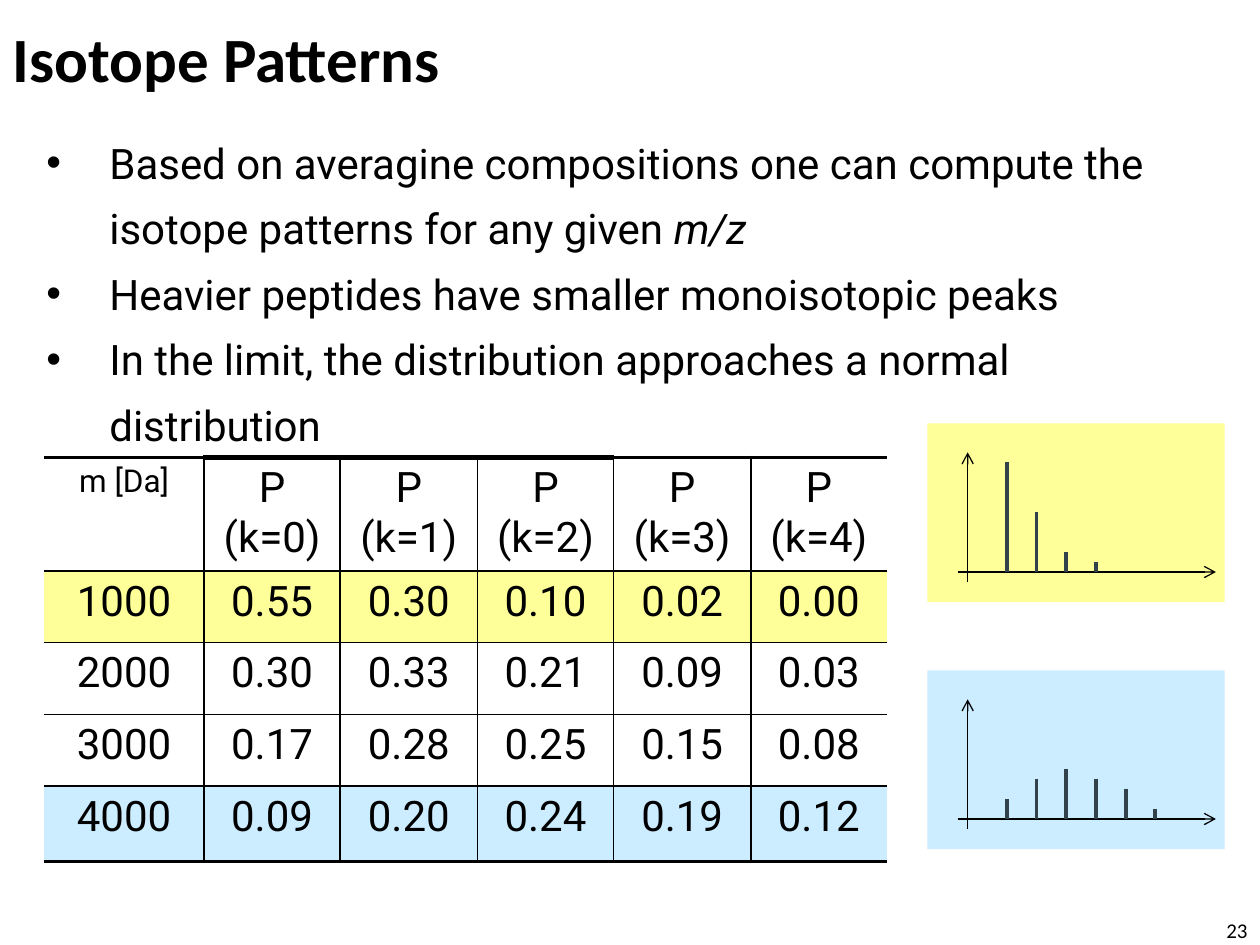
from lxml.etree import SubElement
from pptx import Presentation
from pptx.dml.color import RGBColor
from pptx.enum.shapes import MSO_CONNECTOR as Connector, MSO_SHAPE as Shape
from pptx.enum.text import MSO_ANCHOR as Anchor, MSO_AUTO_SIZE as AutoSize, PP_ALIGN as Align
from pptx.oxml.ns import qn
from pptx.util import Inches, Pt

COLORS = {"ink": "000000", "peak": "31424A", "yellow": "FFFF99", "blue": "CCECFF"}
BODY_FONT, HEAD_FONT = "Roboto", "Calibri"

BULLETS = [
    [("Based on averagine compositions one can compute the isotope patterns "
      "for any given ", False), ("m/z", True)],
    [("Heavier peptides have smaller monoisotopic peaks", False)],
    [("In the limit, the distribution approaches a normal distribution", False)],
]
PROBABILITIES = [
    ["m [Da]"] + [f"P\n(k={k})" for k in range(5)],
    ["1000", "0.55", "0.30", "0.10", "0.02", "0.00"],
    ["2000", "0.30", "0.33", "0.21", "0.09", "0.03"],
    ["3000", "0.17", "0.28", "0.25", "0.15", "0.08"],
    ["4000", "0.09", "0.20", "0.24", "0.19", "0.12"],
]
COLUMN_WIDTHS = [1.27, 1.08, 1.09, 1.08, 1.09, 1.08]
ROW_HEIGHTS = [0.9, 0.57, 0.57, 0.57, 0.6]
ROW_FILLS = {1: "yellow", 4: "blue"}


def rgb(name):
    return RGBColor.from_string(COLORS[name])


class SlideBuilder:
    def __init__(self, page):
        self.page = page

    def span(self, para, text, size, font=BODY_FONT, bold=False, italic=False):
        span = para.add_run()
        span.text = text
        span.font.size = Pt(size)
        span.font.name = font
        span.font.bold = bold
        span.font.italic = italic
        span.font.color.rgb = rgb("ink")

    def title(self, text, left, top, width, height):
        box = self.page.shapes.title
        box.left, box.top = Inches(left), Inches(top)
        box.width, box.height = Inches(width), Inches(height)
        frame = box.text_frame
        frame.auto_size = AutoSize.NONE
        frame.vertical_anchor = Anchor.MIDDLE
        para = frame.paragraphs[0]
        para.alignment = Align.LEFT
        self.span(para, text, 36, HEAD_FONT, bold=True)

    def text_box(self, left, top, width, height):
        box = self.page.shapes.add_textbox(
            Inches(left), Inches(top), Inches(width), Inches(height))
        box.text_frame.word_wrap = True
        return box.text_frame

    def bullets(self, items, left, top, width, height):
        frame = self.text_box(left, top, width, height)
        frame.auto_size = AutoSize.SHAPE_TO_FIT_TEXT
        for index, item in enumerate(items):
            para = frame.add_paragraph() if index else frame.paragraphs[0]
            para.line_spacing = 1.3
            props = para._p.get_or_add_pPr()
            props.set("marL", str(Inches(0.5)))
            props.set("indent", str(-Inches(0.5)))
            SubElement(props, qn("a:buFont")).set("typeface", "Arial")
            SubElement(props, qn("a:buChar")).set("char", "•")
            for text, italic in item:
                self.span(para, text, 24, italic=italic)

    def page_number(self, text, left, top, width, height):
        frame = self.text_box(left, top, width, height)
        frame.vertical_anchor = Anchor.MIDDLE
        para = frame.paragraphs[0]
        para.alignment = Align.RIGHT
        self.span(para, text, 12, HEAD_FONT)

    def borders(self, cell, widths):
        """Draw left, right, top and bottom borders; width 0 means none."""
        props = cell._tc.get_or_add_tcPr()
        for index, (side, width) in enumerate(zip("LRTB", widths)):
            line = SubElement(props, qn(f"a:ln{side}"))
            props.insert(index, line)
            if width:
                line.set("w", str(Pt(width)))
                fill = SubElement(line, qn("a:solidFill"))
                SubElement(fill, qn("a:srgbClr")).set("val", COLORS["ink"])
            else:
                SubElement(line, qn("a:noFill"))

    def table(self, rows, left, top):
        last_row, last_column = len(rows) - 1, len(rows[0]) - 1
        table = self.page.shapes.add_table(
            len(rows), len(rows[0]), Inches(left), Inches(top),
            Inches(sum(COLUMN_WIDTHS)), Inches(sum(ROW_HEIGHTS))).table
        table.first_row = table.horz_banding = False
        for column, width in zip(table.columns, COLUMN_WIDTHS):
            column.width = Inches(width)
        for r, texts in enumerate(rows):
            table.rows[r].height = Inches(ROW_HEIGHTS[r])
            for c, text in enumerate(texts):
                cell = table.cell(r, c)
                if r in ROW_FILLS:
                    cell.fill.solid()
                    cell.fill.fore_color.rgb = rgb(ROW_FILLS[r])
                else:
                    cell.fill.background()
                frame = cell.text_frame
                for index, line in enumerate(text.split("\n")):
                    para = frame.add_paragraph() if index else frame.paragraphs[0]
                    para.alignment = Align.CENTER
                    self.span(para, line, 18 if r == c == 0 else 24)
                header_top = 3 if c in (1, 2, 3) else 2.25
                self.borders(cell, [
                    1 if c else 0,
                    1 if c < last_column else 0,
                    1 if r else header_top,
                    1 if r < last_row else 2.25])

    def line(self, group, start, end, color, width, arrow=False):
        line = group.shapes.add_connector(
            Connector.STRAIGHT, *(Inches(value) for value in start + end))
        line.line.color.rgb = rgb(color)
        line.line.width = Pt(width)
        props = line._element.spPr
        if arrow:
            SubElement(props.find(qn("a:ln")), qn("a:tailEnd")).set("type", "arrow")
        SubElement(props, qn("a:effectLst"))

    def spectrum(self, top, fill, peaks):
        left = 7.36
        group = self.page.shapes.add_group_shape()
        panel = group.shapes.add_shape(
            Shape.RECTANGLE, Inches(left), Inches(top), Inches(2.36), Inches(1.42))
        panel.shadow.inherit = False
        panel.fill.solid()
        panel.fill.fore_color.rgb = rgb(fill)
        panel.line.fill.background()
        # Axes
        base, axis = top + 1.18, left + 0.32
        self.line(group, (left + 0.24, base), (left + 2.29, base), "ink", 0.75, True)
        self.line(group, (axis, base + 0.08), (axis, top + 0.23), "ink", 0.75, True)
        # Evenly spaced isotope peaks
        for index, height in enumerate(peaks):
            x = left + 0.63 + 0.236 * index
            self.line(group, (x, base - height), (x, base), "peak", 2.25)


def main():
    deck = Presentation()
    deck.slide_width, deck.slide_height = Inches(10), Inches(7.5)
    slide = SlideBuilder(deck.slides.add_slide(deck.slide_layouts[5]))

    # Heading and statements
    slide.title("Isotope Patterns", 0, 0, 8.78, 0.91)
    slide.bullets(BULLETS, 0.27, 0.92, 9.53, 2.73)

    # Isotope probabilities by mass
    slide.table(PROBABILITIES, 0.35, 3.63)

    # Spectra for the two highlighted masses
    slide.spectrum(3.36, "yellow", [0.87, 0.48, 0.16, 0.08])
    slide.spectrum(5.32, "blue", [0.16, 0.32, 0.4, 0.32, 0.24, 0.08])

    slide.page_number("23", 7.5, 7.27, 2.5, 0.23)
    deck.save("out.pptx")


if __name__ == "__main__":
    main()
